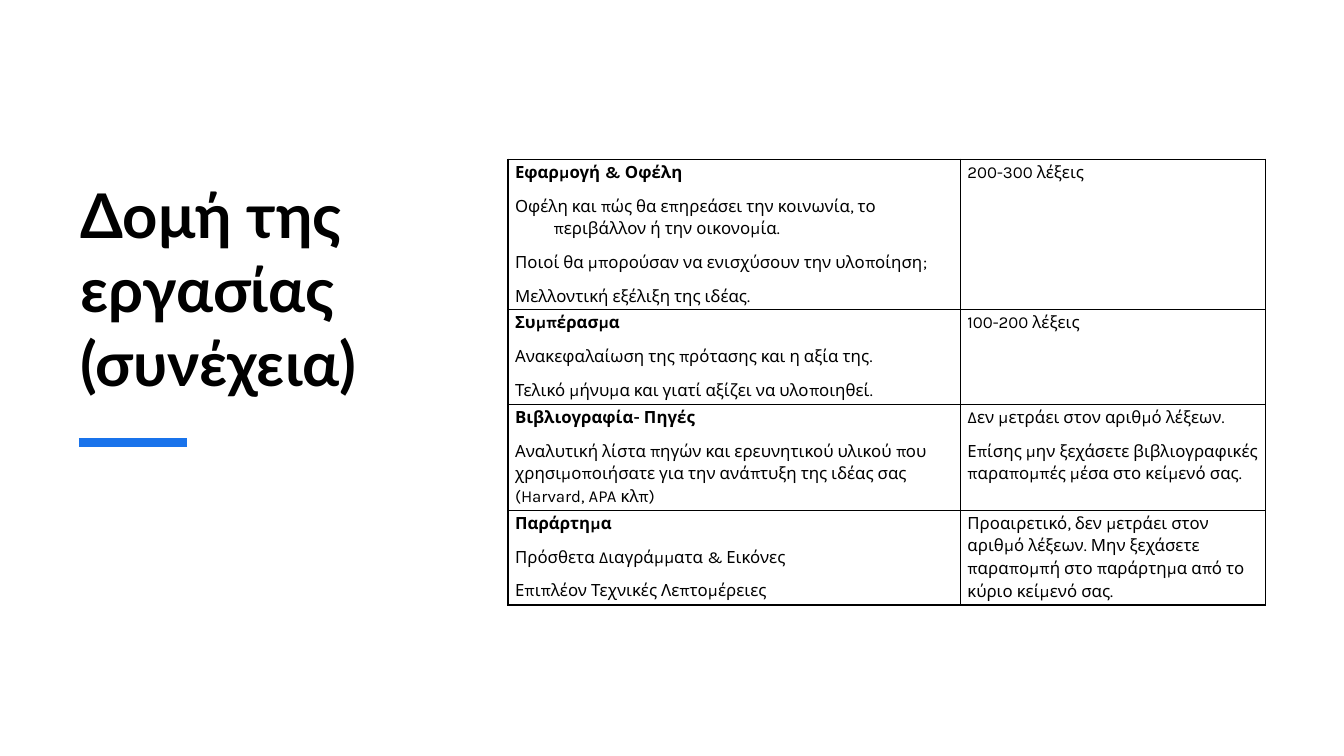
from lxml.etree import SubElement
from pptx import Presentation
from pptx.dml.color import RGBColor
from pptx.enum.shapes import MSO_CONNECTOR
from pptx.enum.text import MSO_ANCHOR
from pptx.oxml.ns import qn
from pptx.util import Cm, Pt

BLACK, WHITE, BLUE = "000000", "FFFFFF", "1973EB"
COLUMN_WIDTHS = [11.4, 7.7]
ROW_HEIGHTS = [3.78, 2.39, 2.67, 2.39]
HANGING = 0.97

SECTIONS = [
    ("Εφαρμογή & Οφέλη",
     ["Οφέλη και πώς θα επηρεάσει την κοινωνία, το περιβάλλον ή την οικονομία.",
      "Ποιοί θα μπορούσαν να ενισχύσουν την υλοποίηση;",
      "Μελλοντική εξέλιξη της ιδέας."],
     HANGING, ["200-300 λέξεις"]),
    ("Συμπέρασμα",
     ["Ανακεφαλαίωση της πρότασης και η αξία της.",
      "Τελικό μήνυμα και γιατί αξίζει να υλοποιηθεί."],
     HANGING, ["100-200 λέξεις"]),
    ("Βιβλιογραφία- Πηγές",
     ["Αναλυτική λίστα πηγών και ερευνητικού υλικού που χρησιμοποιήσατε "
      "για την ανάπτυξη της ιδέας σας (Harvard, APA κλπ)"],
     0, ["Δεν μετράει στον αριθμό λέξεων.",
         "Επίσης μην ξεχάσετε βιβλιογραφικές παραπομπές μέσα στο κείμενό σας."]),
    ("Παράρτημα",
     ["Πρόσθετα Διαγράμματα & Εικόνες", "Επιπλέον Τεχνικές Λεπτομέρειες"],
     0, ["Προαιρετικό, δεν μετράει στον αριθμό λέξεων. Μην ξεχάσετε "
         "παραπομπή στο παράρτημα από το κύριο κείμενό σας."]),
]


def color(hex_string):
    """Return the colour for a hex string."""
    return RGBColor.from_string(hex_string)


def write(paragraph, text, font="Karla", size=12, bold=False, hanging=0,
          line_spacing=1.15, space_after=8):
    """Write formatted text into a paragraph."""
    run = paragraph.add_run()
    run.text = text
    run.font.name = font
    run.font.size = Pt(size)
    run.font.bold = bold
    run.font.color.rgb = color(BLACK)
    paragraph.line_spacing = line_spacing
    paragraph.space_after = Pt(space_after)
    if hanging:
        properties = paragraph._p.get_or_add_pPr()
        properties.set("marL", str(Cm(hanging)))
        properties.set("indent", str(-Cm(hanging)))


def border_cell(cell, width=1):
    """Draw a black border on every side of a cell."""
    properties = cell._tc.get_or_add_tcPr()
    for index, side in enumerate(("lnL", "lnR", "lnT", "lnB")):
        line = properties.makeelement(qn(f"a:{side}"), {"w": str(Pt(width))})
        fill = SubElement(line, qn("a:solidFill"))
        SubElement(fill, qn("a:srgbClr"), val=BLACK)
        properties.insert(index, line)


def fill_cell(cell, entries):
    """Format a cell and write one paragraph for each entry."""
    cell.margin_left = cell.margin_right = Cm(0.18)
    cell.margin_top, cell.margin_bottom = Cm(0.02), 0
    cell.fill.solid()
    cell.fill.fore_color.rgb = color(WHITE)
    border_cell(cell)
    frame = cell.text_frame
    for index, (text, style) in enumerate(entries):
        paragraph = frame.add_paragraph() if index else frame.paragraphs[0]
        write(paragraph, text, **style)


def add_title(slide, left, top, width, height):
    """Place the title in its box with the accent line below it."""
    box = slide.shapes.add_textbox(Cm(left), Cm(top), Cm(width), Cm(height))
    frame = box.text_frame
    frame.word_wrap = True
    frame.vertical_anchor = MSO_ANCHOR.BOTTOM
    write(frame.paragraphs[0], "Δομή της εργασίας (συνέχεια)", font="Lato",
          size=44, bold=True, line_spacing=1.0, space_after=0)

    line_left, line_top = Cm(left + 0.21), Cm(top + height + 0.97)
    accent = slide.shapes.add_connector(
        MSO_CONNECTOR.STRAIGHT, line_left, line_top, line_left + Cm(2.72), line_top)
    accent.line.color.rgb = color(BLUE)
    accent.line.width = Pt(6)
    SubElement(accent._element.spPr, qn("a:effectLst"))


def add_sections(slide, left, top, width, height):
    """Place the table of sections and word counts in its box."""
    table = slide.shapes.add_table(
        len(SECTIONS), len(COLUMN_WIDTHS), Cm(left), Cm(top), Cm(width), Cm(height)).table
    table.first_row = table.horz_banding = False
    for column, share in zip(table.columns, COLUMN_WIDTHS):
        column.width = Cm(width * share / sum(COLUMN_WIDTHS))
    for row, share in zip(table.rows, ROW_HEIGHTS):
        row.height = Cm(height * share / sum(ROW_HEIGHTS))
    for row, (heading, points, hanging, notes) in zip(table.rows, SECTIONS):
        content, length = row.cells
        fill_cell(content, [(heading, {"bold": True})]
                  + [(point, {"hanging": hanging}) for point in points])
        fill_cell(length, [(note, {}) for note in notes])


def main():
    """Build the slide and save it."""
    presentation = Presentation()
    presentation.slide_width, presentation.slide_height = Cm(33.87), Cm(19.05)
    slide = presentation.slides.add_slide(presentation.slide_layouts[6])
    add_title(slide, 1.78, 2.84, 8.76, 7.34)
    add_sections(slide, 12.8, 4.01, 19.1, 11.23)
    presentation.save("out.pptx")


if __name__ == "__main__":
    main()
